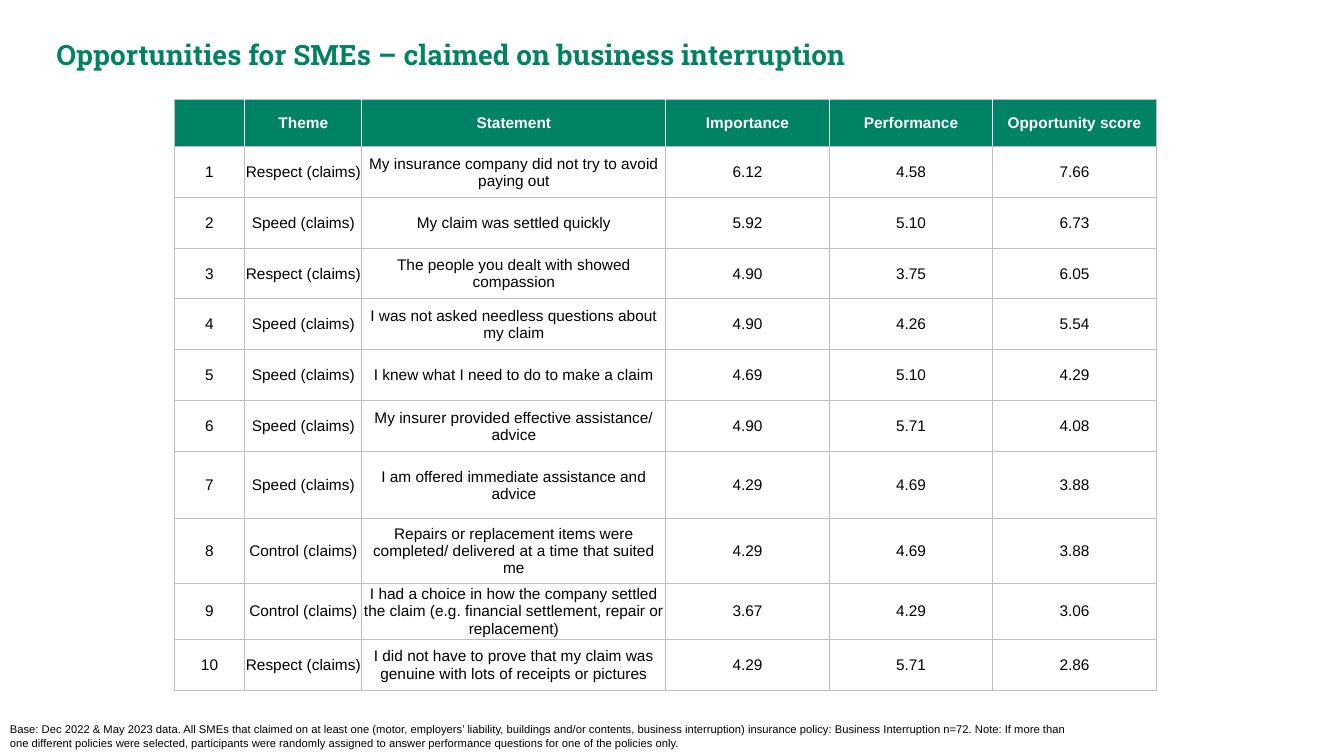
import dataclasses

import lxml.etree
import pptx
import pptx.dml.color
import pptx.enum.text
import pptx.oxml.ns
import pptx.util

Cm = pptx.util.Cm
Pt = pptx.util.Pt
RGBColor = pptx.dml.color.RGBColor
ANCHOR = pptx.enum.text.MSO_ANCHOR
ALIGN = pptx.enum.text.PP_ALIGN


@dataclasses.dataclass(frozen=True)
class Theme:
    green: str = "008265"
    white: str = "FFFFFF"
    black: str = "000000"
    grid: str = "BFBFBF"
    title_font: str = "Roboto Slab"
    body_font: str = "Arial"
    title_size: float = 20
    table_size: float = 11
    note_size: float = 8
    grid_width: float = 0.75
    divider_width: float = 1


HEADINGS = ("", "Theme", "Statement", "Importance", "Performance", "Opportunity score")
OPPORTUNITIES = (
    ("Respect (claims)", "My insurance company did not try to avoid paying out", "6.12", "4.58", "7.66"),
    ("Speed (claims)", "My claim was settled quickly", "5.92", "5.10", "6.73"),
    ("Respect (claims)", "The people you dealt with showed compassion", "4.90", "3.75", "6.05"),
    ("Speed (claims)", "I was not asked needless questions about my claim", "4.90", "4.26", "5.54"),
    ("Speed (claims)", "I knew what I need to do to make a claim", "4.69", "5.10", "4.29"),
    ("Speed (claims)", "My insurer provided effective assistance/ advice", "4.90", "5.71", "4.08"),
    ("Speed (claims)", "I am offered immediate assistance and advice", "4.29", "4.69", "3.88"),
    ("Control (claims)", "Repairs or replacement items were completed/ delivered at a time that suited me",
     "4.29", "4.69", "3.88"),
    ("Control (claims)", "I had a choice in how the company settled the claim "
     "(e.g. financial settlement, repair or replacement)", "3.67", "4.29", "3.06"),
    ("Respect (claims)", "I did not have to prove that my claim was genuine with lots of receipts or pictures",
     "4.29", "5.71", "2.86"),
)
COLUMN_WIDTHS = [1.78, 2.95, 7.66] + [4.12] * 3
ROW_HEIGHTS = [1.18] + [1.28] * 6 + [1.7, 1.62, 1.41, 1.28]
BASE_NOTE = (
    "Base: Dec 2022 & May 2023 data. All SMEs that claimed on at least one (motor, employers’ liability, "
    "buildings and/or contents, business interruption) insurance policy: Business Interruption n=72. "
    "Note: If more than one different policies were selected, participants were randomly assigned to answer "
    "performance questions for one of the policies only."
)


class SlideBuilder:
    def __init__(self, slide, theme):
        self.slide = slide
        self.theme = theme

    def add_run(self, paragraph, text, font, size, color, bold=False):
        run = paragraph.add_run()
        run.text = text
        run.font.name = font
        run.font.size = Pt(size)
        run.font.bold = bold
        run.font.color.rgb = RGBColor.from_string(color)

    def text(self, left, top, width, height, text, font, size, color, bold=False):
        box = self.slide.shapes.add_textbox(Cm(left), Cm(top), Cm(width), Cm(height))
        box.text_frame.word_wrap = True
        self.add_run(box.text_frame.paragraphs[0], text, font, size, color, bold)

    def border(self, cell, side, color, width):
        """Draw one cell side: L, R, T or B, added in that order and before the fill."""
        qn = pptx.oxml.ns.qn
        line = lxml.etree.SubElement(
            cell._tc.get_or_add_tcPr(), qn(f"a:ln{side}"), w=str(Pt(width)))
        fill = lxml.etree.SubElement(line, qn("a:solidFill"))
        lxml.etree.SubElement(fill, qn("a:srgbClr"), val=color)

    def cell(self, cell, text, is_header, divided_sides):
        theme = self.theme
        cell.vertical_anchor = ANCHOR.MIDDLE
        cell.margin_left = cell.margin_right = cell.margin_top = Cm(0.02)
        cell.margin_bottom = 0
        for side in "LRTB":
            if side in divided_sides:
                self.border(cell, side, theme.white, theme.divider_width)
            else:
                self.border(cell, side, theme.grid, theme.grid_width)
        if is_header:
            cell.fill.solid()
            cell.fill.fore_color.rgb = RGBColor.from_string(theme.green)
        else:
            cell.fill.background()
        if text:
            paragraph = cell.text_frame.paragraphs[0]
            paragraph.alignment = ALIGN.CENTER
            color = theme.white if is_header else theme.black
            self.add_run(paragraph, text, theme.body_font, theme.table_size, color, is_header)

    def table(self, left, top, widths, heights, rows):
        frame = self.slide.shapes.add_table(
            len(rows), len(widths), Cm(left), Cm(top), Cm(sum(widths)), Cm(sum(heights)))
        table = frame.table
        table.first_row = table.horz_banding = False
        for column, width in zip(table.columns, widths):
            column.width = Cm(width)
        for row, height in zip(table.rows, heights):
            row.height = Cm(height)
        last = len(widths) - 1
        for r, values in enumerate(rows):
            for c, value in enumerate(values):
                divided = ("L" if c > 0 else "") + ("R" if c < last else "")
                self.cell(table.cell(r, c), value, r == 0, divided if r == 0 else "")


def main():
    deck = pptx.Presentation()
    deck.slide_width, deck.slide_height = Cm(33.87), Cm(19.05)
    theme = Theme()
    builder = SlideBuilder(deck.slides.add_slide(deck.slide_layouts[6]), theme)
    builder.text(1.17, 0.81, 31.19, 1.12, "Opportunities for SMEs – claimed on business interruption",
                 theme.title_font, theme.title_size, theme.green, bold=True)
    ranked = [(str(rank), *row) for rank, row in enumerate(OPPORTUNITIES, 1)]
    builder.table(4.39, 2.51, COLUMN_WIDTHS, ROW_HEIGHTS, [HEADINGS, *ranked])
    builder.text(0, 18.08, 27.23, 0.97, BASE_NOTE, theme.body_font, theme.note_size, theme.black)
    deck.save("out.pptx")


if __name__ == "__main__":
    main()
